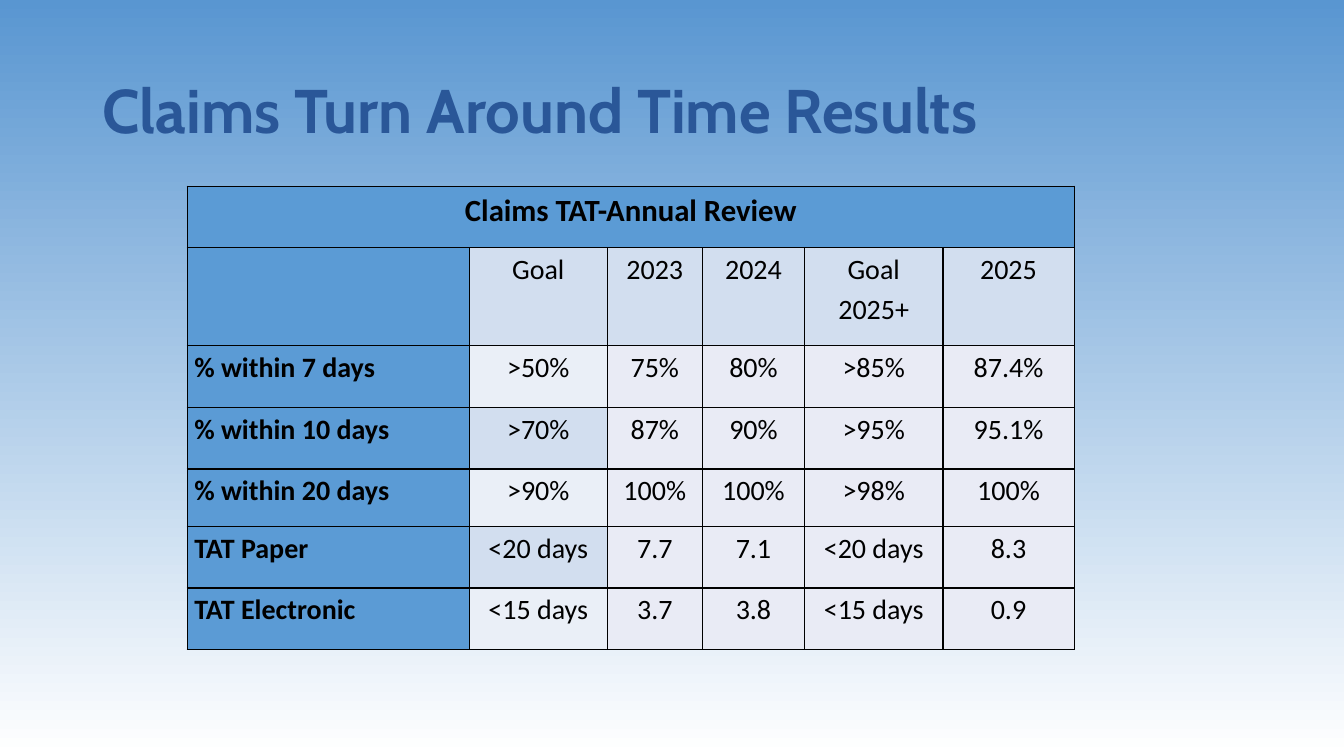
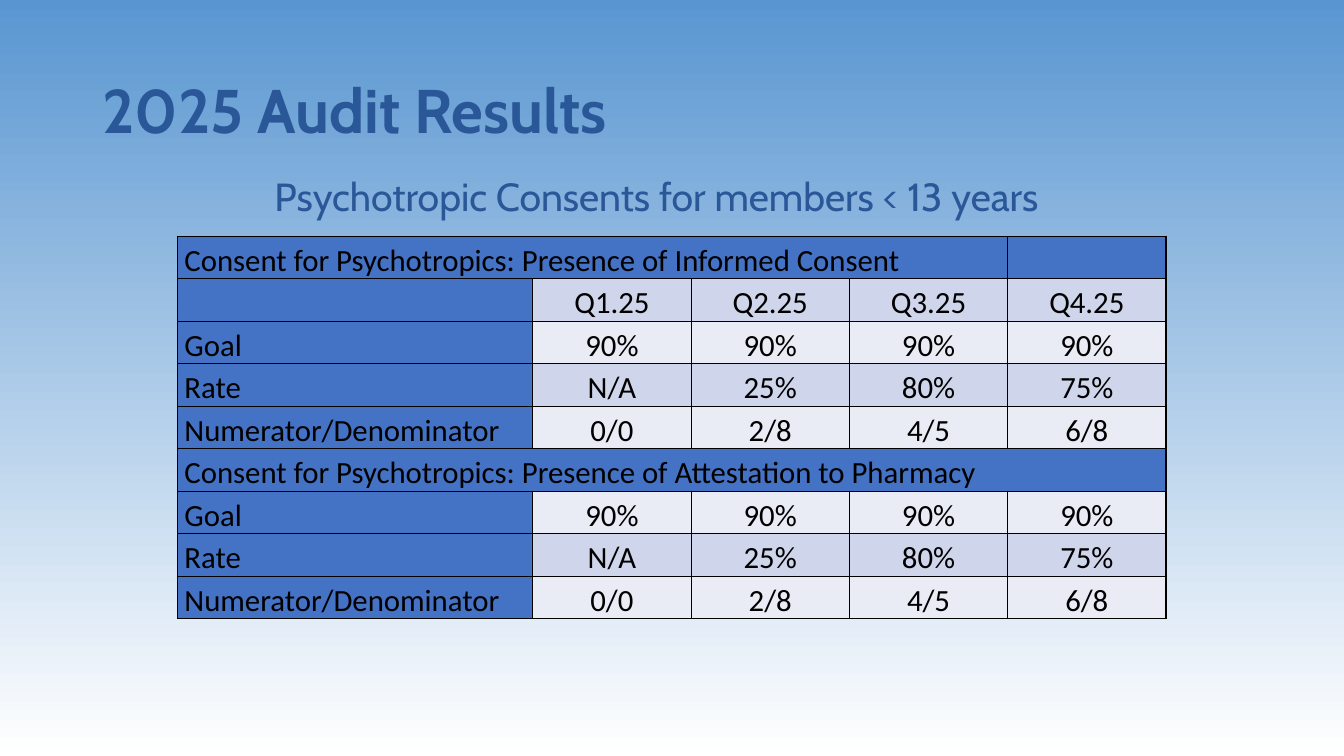
from dataclasses import dataclass
from typing import Callable

from lxml.etree import SubElement
from pptx import Presentation
from pptx.dml.color import RGBColor
from pptx.enum.text import MSO_ANCHOR as Anchor, PP_ALIGN as Align
from pptx.oxml.ns import qn
from pptx.util import Pt

NAVY, BLACK, SKY, WHITE = "2A5798", "000000", "5996D1", "FFFFFF"
PALE = "E9EBF5"
HEADING_FONT, TABLE_FONT = "Cabin", "Calibri"


@dataclass(frozen=True)
class Style:
    size: float
    font: str = TABLE_FONT
    color: str = BLACK
    bold: bool = False
    align: Align = Align.LEFT
    spacing: float = 1.15
    after: float = 0


@dataclass(frozen=True)
class Grid:
    left: float
    top: float
    widths: list[float]
    heights: list[float]
    rows: list[list[str]]
    spans: dict[int, int]
    accent: str
    shade: Callable[[int, int], str]
    banner: Style
    label: Style
    value: Style


TITLE = Style(44, HEADING_FONT, NAVY, bold=True, spacing=0.9)
SUBTITLE = Style(28, HEADING_FONT, NAVY, spacing=0.9)


def rgb(color: str) -> RGBColor:
    return RGBColor.from_string(color)


def write(frame, text: str, style: Style) -> None:
    for index, line in enumerate(text.split("\n")):
        para = frame.add_paragraph() if index else frame.paragraphs[0]
        para.alignment = style.align
        para.line_spacing = style.spacing
        para.space_before = Pt(0)
        para.space_after = Pt(style.after)
        span = para.add_run()
        span.text = line
        span.font.name = style.font
        span.font.size = Pt(style.size)
        span.font.bold = style.bold
        span.font.color.rgb = rgb(style.color)


def add_text(page, left: float, top: float, width: float, height: float,
             text: str, style: Style, anchor: Anchor) -> None:
    box = page.shapes.add_textbox(Pt(left), Pt(top), Pt(width), Pt(height))
    box.text_frame.word_wrap = True
    box.text_frame.vertical_anchor = anchor
    write(box.text_frame, text, style)


def add_borders(cell) -> None:
    properties = cell._tc.get_or_add_tcPr()
    for side in ("lnL", "lnR", "lnT", "lnB"):
        line = SubElement(properties, qn(f"a:{side}"), w=str(Pt(1)))
        fill = SubElement(line, qn("a:solidFill"))
        SubElement(fill, qn("a:srgbClr"), val=BLACK)


def add_grid(page, grid: Grid) -> None:
    table = page.shapes.add_table(
        len(grid.heights), len(grid.widths), Pt(grid.left), Pt(grid.top),
        Pt(sum(grid.widths)), Pt(sum(grid.heights))).table
    table.first_row = table.horz_banding = False
    for column, width in zip(table.columns, grid.widths):
        column.width = Pt(width)
    for row, height in zip(table.rows, grid.heights):
        row.height = Pt(height)
    for row, count in grid.spans.items():
        table.cell(row, 0).merge(table.cell(row, count - 1))
    for row, texts in enumerate(grid.rows):
        for column in range(len(grid.widths)):
            cell = table.cell(row, column)
            cell.margin_left = cell.margin_right = Pt(5)
            cell.margin_top = cell.margin_bottom = Pt(0)
            add_borders(cell)
            accented = row in grid.spans or column == 0
            cell.fill.solid()
            cell.fill.fore_color.rgb = rgb(
                grid.accent if accented else grid.shade(row, column))
            text = texts[column] if column < len(texts) else ""
            if text:
                style = (grid.banner if row in grid.spans
                         else grid.label if column == 0 else grid.value)
                write(cell.text_frame, text, style)


def shade_claims(row: int, column: int) -> str:
    if row == 1 or (column == 1 and row % 2):
        return "D2DEEF"
    return "EAEFF7" if column == 1 else PALE


def shade_audit(row: int, column: int) -> str:
    return "CFD5EA" if row in (1, 3, 7) else PALE


CLAIMS = Grid(
    left=133.8, top=133, widths=[201.5, 98.5, 68, 73, 98.8, 93.8],
    heights=[44, 70, 44, 44, 41, 44, 44],
    rows=[
        ["Claims TAT-Annual Review"],
        ["", "Goal", "2023", "2024", "Goal\n2025+", "2025"],
        ["% within 7 days", ">50%", "75%", "80%", ">85%", "87.4%"],
        ["% within 10 days", ">70%", "87%", "90%", ">95%", "95.1%"],
        ["% within 20 days", ">90%", "100%", "100%", ">98%", "100%"],
        ["TAT Paper", "<20 days", "7.7", "7.1", "<20 days", "8.3"],
        ["TAT Electronic", "<15 days", "3.7", "3.8", "<15 days", "0.9"],
    ],
    spans={0: 6}, accent="5B9BD5", shade=shade_claims,
    banner=Style(22, bold=True, align=Align.CENTER),
    label=Style(20, bold=True), value=Style(20, align=Align.CENTER))

MEASURES = [
    ["Goal"] + ["90%"] * 4,
    ["Rate", "N/A", "25%", "80%", "75%"],
    ["Numerator/Denominator", "0/0", "2/8", "4/5", "6/8"],
]
AUDIT_LABEL = Style(22, after=10)
AUDIT = Grid(
    left=126.8, top=168.8, widths=[253.8] + [113.1] * 4, heights=[30] * 9,
    rows=[
        ["Consent for Psychotropics: Presence of Informed Consent"],
        ["", "Q1.25", "Q2.25", "Q3.25", "Q4.25"],
        *MEASURES,
        ["Consent for Psychotropics: Presence of Attestation to Pharmacy"],
        *MEASURES,
    ],
    spans={0: 4, 5: 5}, accent="4472C4", shade=shade_audit,
    banner=AUDIT_LABEL, label=AUDIT_LABEL,
    value=Style(22, align=Align.CENTER, after=10))


def set_background(deck) -> None:
    fill = deck.slide_master.background.fill
    fill.gradient()
    fill.gradient_angle = 270
    for stop, color, position in zip(fill.gradient_stops, (SKY, WHITE), (0, 1)):
        stop.color.rgb = rgb(color)
        stop.position = position


def add_page(deck, title: str, grid: Grid):
    page = deck.slides.add_slide(deck.slide_layouts[6])
    add_text(page, 66, 29, 828, 104, title, TITLE, Anchor.MIDDLE)
    add_grid(page, grid)
    return page


def main() -> None:
    deck = Presentation()
    deck.slide_width, deck.slide_height = Pt(960), Pt(540)
    set_background(deck)
    add_page(deck, "Claims Turn Around Time Results", CLAIMS)
    audit = add_page(deck, "2025 Audit Results", AUDIT)
    add_text(audit, 189, 123, 582, 38,
             "Psychotropic Consents for members < 13 years", SUBTITLE, Anchor.TOP)
    deck.save("out.pptx")


if __name__ == "__main__":
    main()
